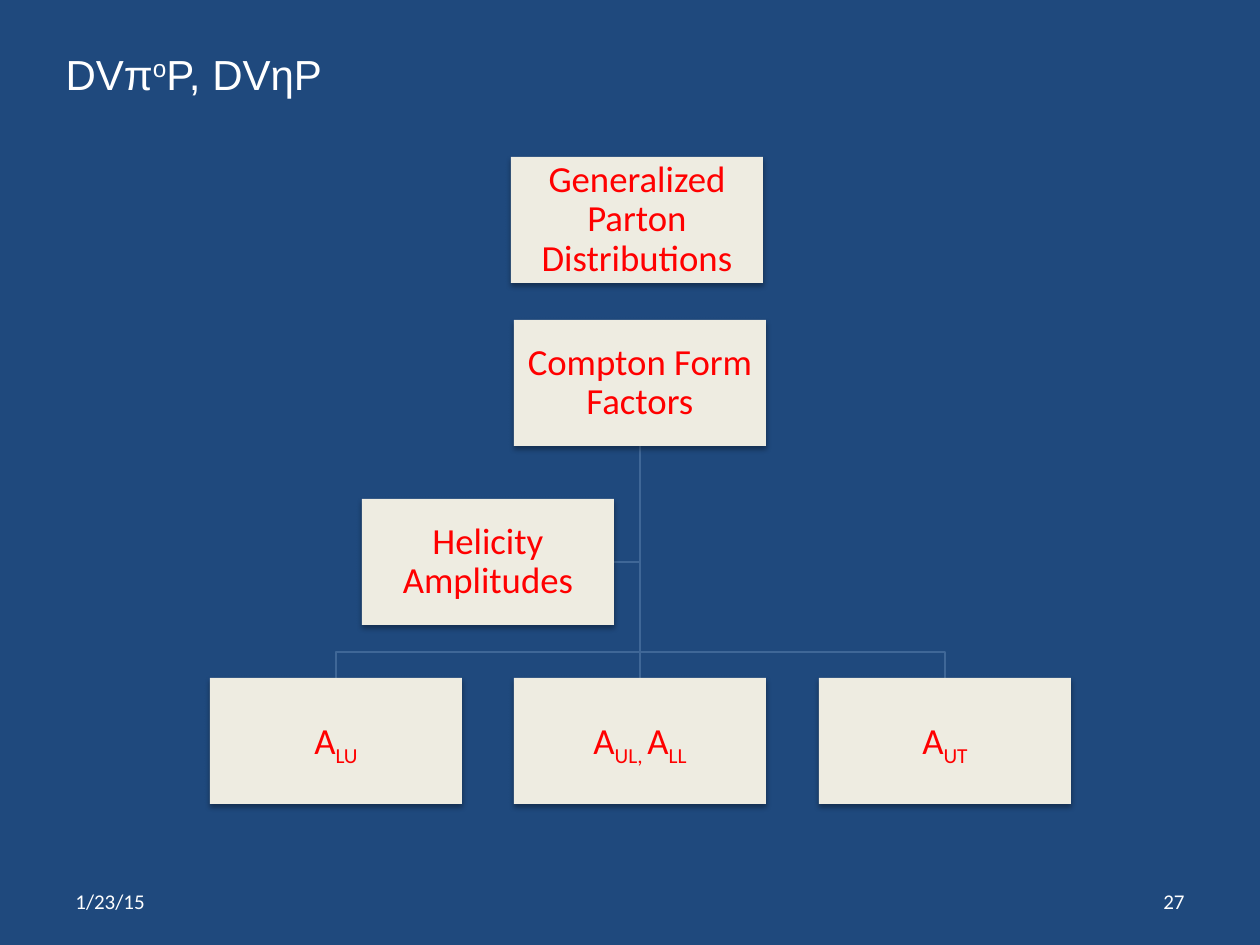
from dataclasses import dataclass

from lxml import etree
from pptx import Presentation
from pptx import util as u
from pptx.dml.color import RGBColor
from pptx.enum import shapes, text
from pptx.oxml import parse_xml
from pptx.oxml.ns import qn

SCALE = 914400 / 126  # EMU per px
NS = "http://schemas.openxmlformats.org/drawingml/2006/main"
SHADOW = (
    f'<a:effectLst xmlns:a="{NS}"><a:outerShdw blurRad="39370" dist="22860" '
    'dir="5400000" rotWithShape="0"><a:srgbClr val="000000">'
    '<a:alpha val="35000"/></a:srgbClr></a:outerShdw></a:effectLst>'
)


@dataclass(frozen=True)
class Theme:
    back: str = "1F497D"
    light: str = "FFFFFF"
    card: str = "EEECE1"
    word: str = "FF0000"
    link: str = "3F6797"
    head: str = "Arial"
    body: str = "Calibri"
    title: int = 24
    label: int = 21
    foot: int = 12


T = Theme()
SUB, SUP = -25, 30
LEFT, MID, RIGHT = text.PP_ALIGN.LEFT, text.PP_ALIGN.CENTER, text.PP_ALIGN.RIGHT


def px(n):
    return u.Emu(round(n * SCALE))


def rgb(code):
    return RGBColor.from_string(code)


def write(para, runs, face, size, color, align):
    """Add (words, baseline) runs to a paragraph."""
    para.alignment = align
    for words, base in runs:
        run = para.add_run()
        run.text = words
        font = run.font
        font.name, font.size = face, u.Pt(size)
        font.color.rgb = rgb(color)
        if base:
            run._r.get_or_add_rPr().set("baseline", str(base * 1000))


def title(slide, box, runs):
    shape = slide.shapes.title
    shape.left, shape.top, shape.width, shape.height = map(px, box)
    frame = shape.text_frame
    frame.word_wrap = False
    frame.auto_size = text.MSO_AUTO_SIZE.SHAPE_TO_FIT_TEXT
    frame.vertical_anchor = text.MSO_ANCHOR.TOP
    write(frame.paragraphs[0], runs, T.head, T.title, T.light, LEFT)


def footer(slide, box, date, page):
    x, y, w, h = box
    part = 294
    for left, words, align in ((x, date, LEFT), (x + w - part, page, RIGHT)):
        frame = slide.shapes.add_textbox(*map(px, (left, y, part, h))).text_frame
        frame.word_wrap = True
        frame.vertical_anchor = text.MSO_ANCHOR.MIDDLE
        write(frame.paragraphs[0], [(words, 0)], T.body, T.foot, T.light, align)


def style(line):
    line.color.rgb = rgb(T.link)
    line.width = u.Pt(0.75)


def elbow(slide, points):
    """Draw an open bent line."""
    first, *rest = [(px(x), px(y)) for x, y in points]
    pen = slide.shapes.build_freeform(*first)
    pen.add_line_segments(rest, close=False)
    shape = pen.convert_to_shape()
    shape.shadow.inherit = False
    shape.fill.background()
    style(shape.line)


def trunk(slide, x, top, end):
    line = slide.shapes.add_connector(
        shapes.MSO_CONNECTOR.STRAIGHT, px(x), px(top), px(x), px(end))
    etree.SubElement(line._element.spPr, qn("a:effectLst"))
    style(line.line)


def card(slide, box, runs):
    shape = slide.shapes.add_shape(shapes.MSO_SHAPE.RECTANGLE, *map(px, box))
    shape.fill.solid()
    shape.fill.fore_color.rgb = rgb(T.card)
    shape.line.fill.background()
    shape._element.spPr.append(parse_xml(SHADOW))
    frame = shape.text_frame
    frame.word_wrap = True
    frame.vertical_anchor = text.MSO_ANCHOR.MIDDLE
    frame.margin_left = frame.margin_right = px(1)
    frame.margin_top = frame.margin_bottom = px(1)
    para = frame.paragraphs[0]
    para.line_spacing = 0.9
    write(para, runs, T.body, T.label, T.word, MID)


def chart(slide, box):
    """Place the tree in its box: root, assistant, three leaves, loose card."""
    x, y, w, h = box
    wide, high = 252, 126
    half = wide // 2
    gap = (w - 3 * wide) // 2
    row = (h - high) // 2
    mid = x + w // 2
    base = y + 2 * row
    bar = base - gap // 2
    side = mid - gap // 2 - wide

    # Links
    root = (mid, y + high)
    arm = y + row + high // 2
    elbow(slide, [root, (mid, arm), (side + wide, arm)])
    for end in (x + w - half, x + half):
        elbow(slide, [root, (mid, bar), (end, bar), (end, base)])
    trunk(slide, mid, y + high, base)

    # Cards
    card(slide, (mid - half, y, wide, high), [("Compton Form Factors", 0)])
    leaves = (
        [("A", 0), ("LU", SUB)],
        [("A", 0), ("UL, ", SUB), ("A", 0), ("LL", SUB)],
        [("A", 0), ("UT", SUB)],
    )
    for i, runs in enumerate(leaves):
        left = x + i * (w - wide) // 2
        card(slide, (left, base, wide, high), runs)
    card(slide, (side, y + row, wide, high), [("Helicity Amplitudes", 0)])
    card(slide, (mid - half - 3, y - 163, wide, high),
         [("Generalized Parton Distributions", 0)])


def main():
    deck = Presentation()
    deck.slide_width, deck.slide_height = px(1260), px(945)
    slide = deck.slides.add_slide(deck.slide_layouts[5])
    fill = slide.background.fill
    fill.solid()
    fill.fore_color.rgb = rgb(T.back)

    footer(slide, (63, 876, 1134, 50), "1/23/15", "27")
    chart(slide, (210, 320, 861, 484))
    title(slide, (53, 42, 286, 63), [("DVπ", 0), ("o", SUP), ("P, DVηP", 0)])
    deck.save("out.pptx")


if __name__ == "__main__":
    main()
